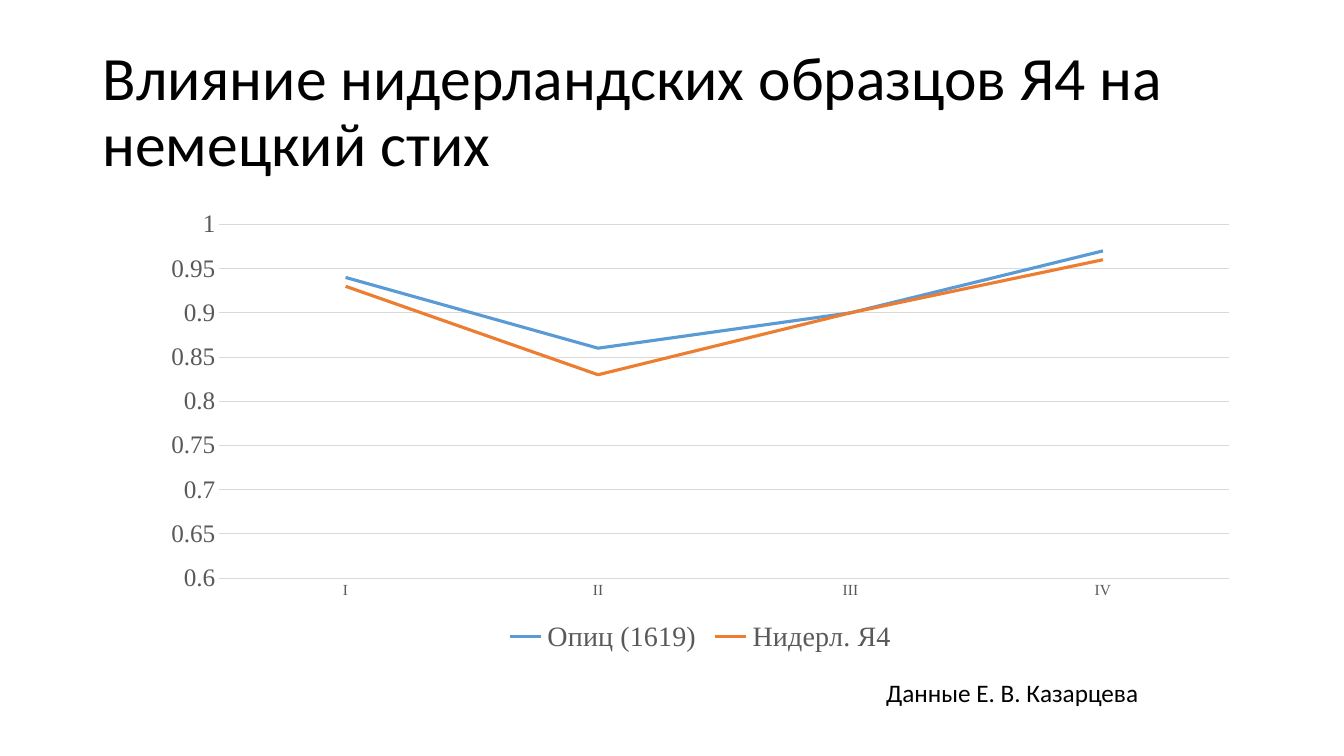
import pptx
import pptx.util
import pptx.chart.data
import pptx.dml.color
import pptx.enum.chart
import pptx.enum.text

Pt = pptx.util.Pt
Inches = pptx.util.Inches
RGBColor = pptx.dml.color.RGBColor

BLACK = RGBColor(0x00, 0x00, 0x00)
GREY = RGBColor(0x59, 0x59, 0x59)
PALE = RGBColor(0xD9, 0xD9, 0xD9)
BLUE = RGBColor(0x5B, 0x9B, 0xD5)
ORANGE = RGBColor(0xED, 0x7D, 0x31)


def set_font(font, name, size, color):
    font.name = name
    font.size = Pt(size)
    font.color.rgb = color


deck = pptx.Presentation()
deck.slide_width = Inches(13.33)
deck.slide_height = Inches(7.5)
slide = deck.slides.add_slide(deck.slide_layouts[6])

captions = [
    ("Влияние нидерландских образцов Я4 на немецкий стих", (0.92, 0.4, 11.5, 1.45), 44, 0.9),
    ("Данные Е. В. Казарцева", (8.69, 6.67, 4.78, 0.4), 18, 1.0),
]
for wording, place, size, spacing in captions:
    frame = slide.shapes.add_textbox(*map(Inches, place)).text_frame
    frame.word_wrap = True
    frame.vertical_anchor = pptx.enum.text.MSO_ANCHOR.MIDDLE
    frame.text = wording
    frame.paragraphs[0].line_spacing = spacing
    set_font(frame.paragraphs[0].runs[0].font, "Calibri", size, BLACK)

stress = pptx.chart.data.CategoryChartData()
stress.categories = ["I", "II", "III", "IV"]
stress.add_series("Опиц (1619)", (0.94, 0.86, 0.9, 0.97))
stress.add_series("Нидерл. Я4", (0.93, 0.83, 0.9, 0.96))
profile = slide.shapes.add_chart(
    pptx.enum.chart.XL_CHART_TYPE.LINE,
    *map(Inches, (1.48, 2, 10.93, 4.53)),
    stress,
).chart
profile.has_title = False
set_font(profile.font, "Times New Roman", 11, BLACK)

profile.has_legend = True
profile.legend.position = pptx.enum.chart.XL_LEGEND_POSITION.BOTTOM
profile.legend.include_in_layout = False
set_font(profile.legend.font, "Times New Roman", 20, GREY)

feet, share = profile.category_axis, profile.value_axis
for axis, size in ((feet, 11), (share, 18)):
    axis.major_tick_mark = pptx.enum.chart.XL_TICK_MARK.NONE
    axis.minor_tick_mark = pptx.enum.chart.XL_TICK_MARK.NONE
    set_font(axis.tick_labels.font, "Times New Roman", size, GREY)

share.minimum_scale = 0.6
share.maximum_scale = 1
share.major_unit = 0.05
share.has_major_gridlines = True
share.format.line.fill.background()
for rule in (feet.format.line, share.major_gridlines.format.line):
    rule.color.rgb = PALE
    rule.width = Pt(0.75)

profile.plots[0].vary_by_categories = False
for verse, color in zip(profile.plots[0].series, (BLUE, ORANGE)):
    verse.smooth = False
    verse.marker.style = pptx.enum.chart.XL_MARKER_STYLE.NONE
    verse.format.line.color.rgb = color
    verse.format.line.width = Pt(2.25)

deck.save("out.pptx")
